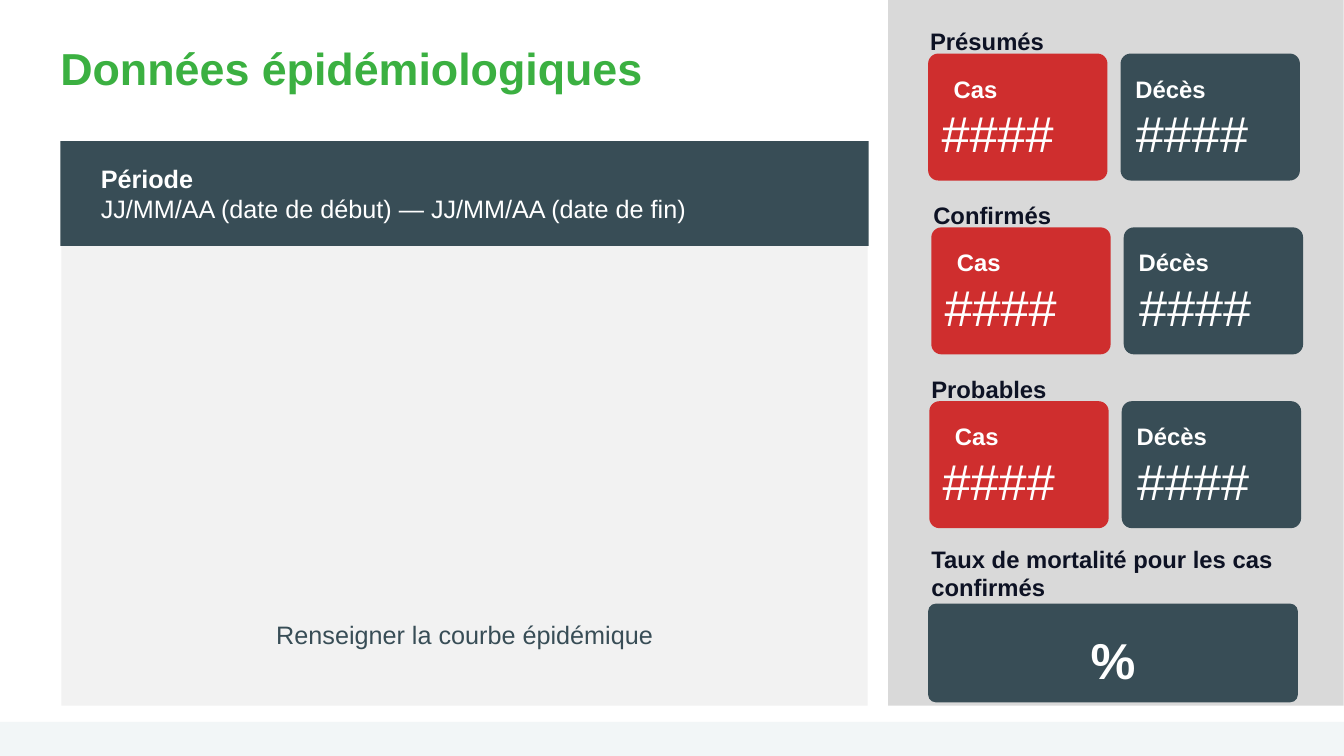
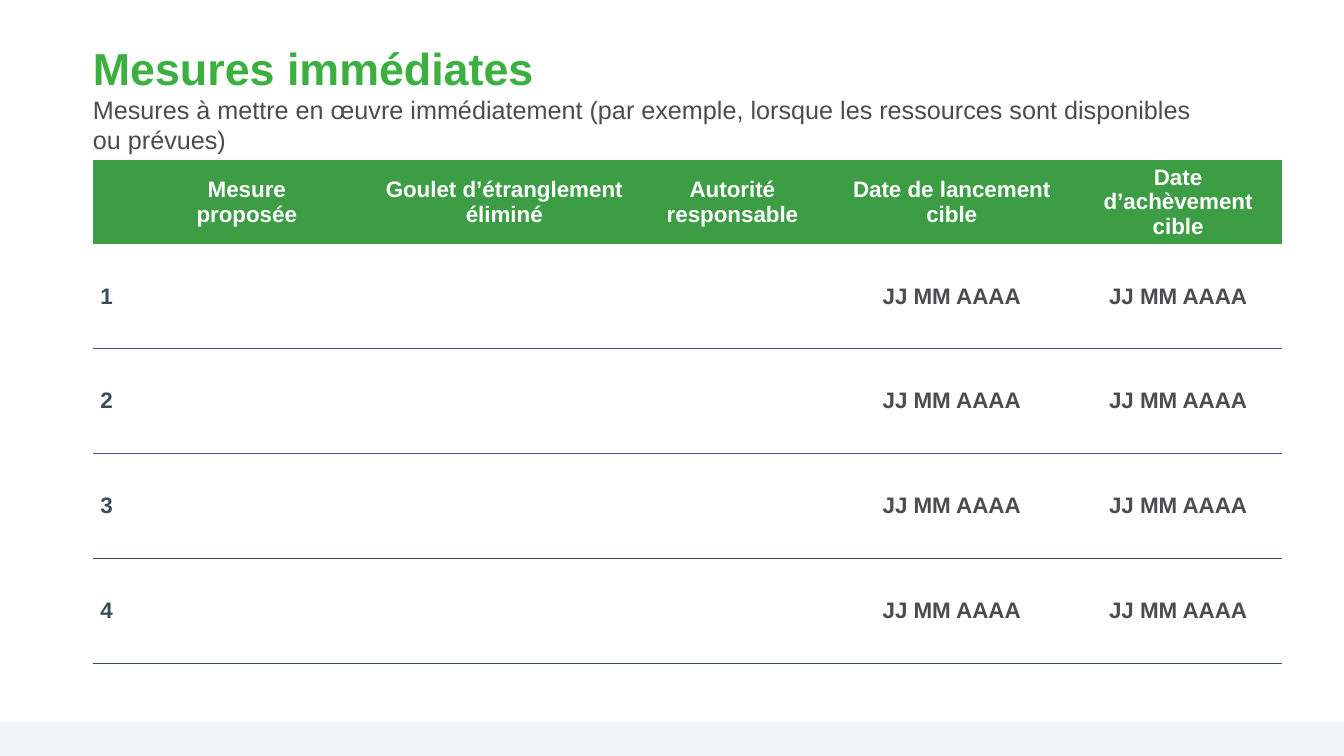
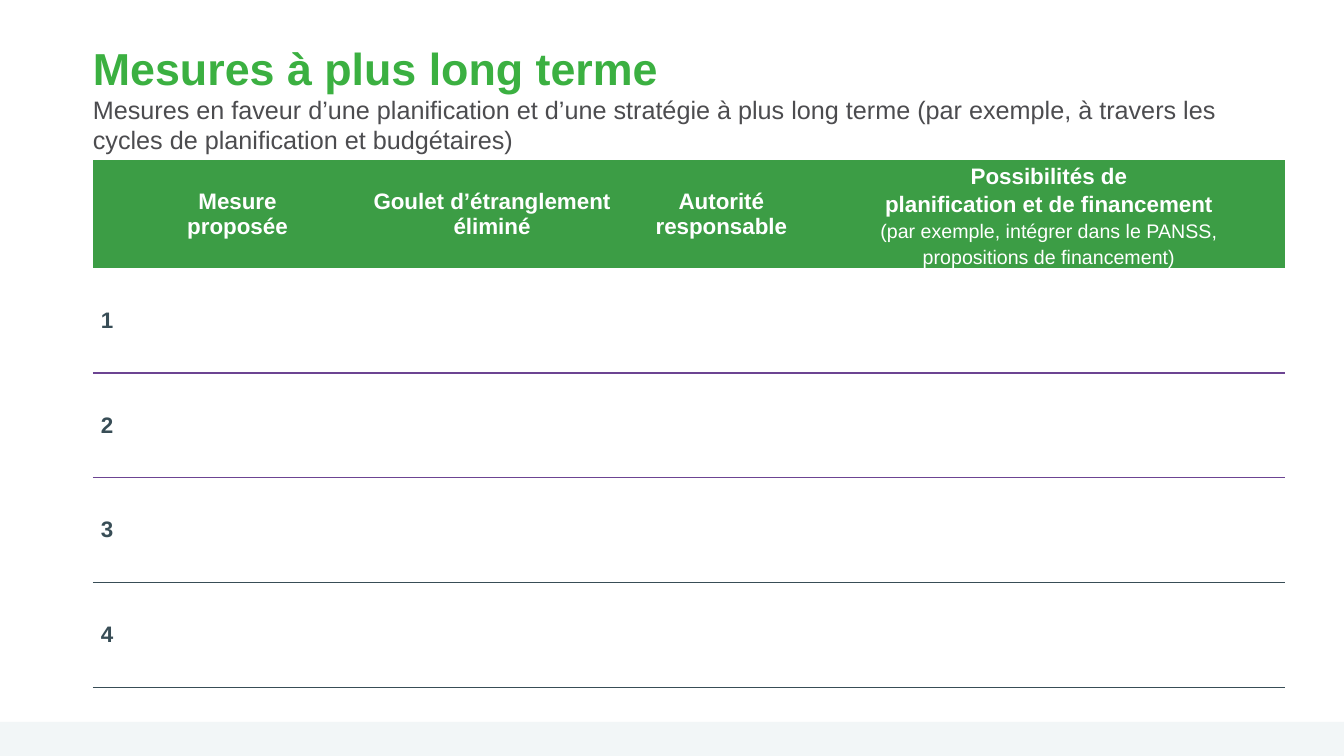
from dataclasses import dataclass
from typing import Sequence

from lxml.etree import SubElement
from pptx import Presentation
from pptx.dml.color import RGBColor
from pptx.enum.shapes import MSO_SHAPE as SHAPE
from pptx.enum.text import MSO_ANCHOR as ANCHOR, MSO_AUTO_SIZE as AUTO, PP_ALIGN as ALIGN
from pptx.oxml.ns import qn
from pptx.util import Cm, Pt

FONT = "Arial"
WHITE = RGBColor(0xFF, 0xFF, 0xFF)
TITLE_GREEN = RGBColor(0x3B, 0xB0, 0x41)
HEADER_GREEN = RGBColor(0x3C, 0x9D, 0x45)
SLATE = RGBColor(0x38, 0x4D, 0x56)
RED = RGBColor(0xCF, 0x2E, 0x2E)
PURPLE = RGBColor(0x6C, 0x44, 0x92)
NAVY = RGBColor(0x0D, 0x12, 0x24)
GREY_TEXT = RGBColor(0x4C, 0x4C, 0x4F)
SIDEBAR_GREY = RGBColor(0xD9, 0xD9, 0xD9)
PANEL_GREY = RGBColor(0xF2, 0xF2, 0xF2)
BAND_GREY = RGBColor(0xF2, 0xF6, 0xF7)

NO_TABLE_STYLE = "{2D5ABB26-0587-4C30-8999-92F81FD0307C}"
DATE = "JJ MM AAAA"
INSET = 0.13
CARD_W, CARD_H, CARD_PITCH = 4.52, 3.2, 4.85
GROUP_TOP, GROUP_STEP = 1.35, 4.38
HEADER_INSETS = (0.18, 0, 0.18, 0)


@dataclass(frozen=True)
class Box:
    """Left, top, width and height in centimetres."""
    x: float
    y: float
    w: float
    h: float

    def lengths(self) -> tuple:
        return Cm(self.x), Cm(self.y), Cm(self.w), Cm(self.h)


@dataclass(frozen=True)
class Line:
    """One paragraph of uniform text."""
    text: str
    size: float
    color: RGBColor
    bold: bool = False


@dataclass(frozen=True)
class CaseGroup:
    heading: str
    left: float
    heading_w: float


@dataclass(frozen=True)
class Card:
    """A count card; the two offsets place its label and its number."""
    label: str
    color: RGBColor
    label_dx: float
    label_w: float
    number_dx: float


@dataclass(frozen=True)
class ActionSlide:
    title: str
    subtitle: str
    title_w: float
    headers: Sequence[Sequence[Line]]
    col_widths: Sequence[float]
    header_h: float
    date_cols: Sequence[int] = ()
    last_spacing: float = 1.0


def header(*texts: str) -> list[Line]:
    return [Line(t, 16, WHITE, True) for t in texts]


GROUPS = (
    CaseGroup("Présumés", 23.39, 3.15),
    CaseGroup("Confirmés", 23.47, 3.28),
    CaseGroup("Probables", 23.42, 3.2),
)
CARDS = (
    Card("Cas", RED, 0.51, 1.37, 0.2),
    Card("Décès", SLATE, 0.23, 2.06, 0.25),
)
COMMON_HEADERS = (
    [],
    header("Mesure", "proposée"),
    header("Goulet d’étranglement", "éliminé"),
    header("Autorité responsable"),
)
ACTION_SLIDES = (
    ActionSlide(
        "Mesures immédiates",
        "Mesures à mettre en œuvre immédiatement (par exemple, lorsque les "
        "ressources sont disponibles ou prévues)",
        28.3,
        (*COMMON_HEADERS, header("Date de lancement cible"),
         header("Date d’achèvement cible")),
        (0.69, 6.38, 6.6, 4.9, 6.15, 5.26),
        2.11,
        date_cols=(4, 5),
    ),
    ActionSlide(
        "Mesures à plus long terme",
        "Mesures en faveur d’une planification et d’une stratégie à plus long "
        "terme (par exemple, à travers les cycles de planification et budgétaires)",
        29.21,
        (*COMMON_HEADERS,
         [*header("Possibilités de", "planification et de financement"),
          Line("(par exemple, intégrer dans le PANSS,", 14, WHITE),
          Line("propositions de financement)", 14, WHITE)]),
        (0.71, 5.87, 6.96, 4.6, 11.91),
        2.7,
        last_spacing=1.15,
    ),
)


def write(tf, lines: Sequence[Line], align=ALIGN.LEFT, spacing: float = 1.0) -> None:
    for i, line in enumerate(lines):
        p = tf.paragraphs[0] if i == 0 else tf.add_paragraph()
        p.alignment, p.line_spacing = align, spacing
        r = p.add_run()
        r.text = line.text
        r.font.name, r.font.size, r.font.bold = FONT, Pt(line.size), line.bold
        r.font.color.rgb = line.color


def set_insets(target, left: float = INSET, top: float = INSET,
               right: float = INSET, bottom: float = INSET) -> None:
    target.margin_left, target.margin_top = Cm(left), Cm(top)
    target.margin_right, target.margin_bottom = Cm(right), Cm(bottom)


def add_block(slide, box: Box, color: RGBColor, radius: float = 0):
    kind = SHAPE.ROUNDED_RECTANGLE if radius else SHAPE.RECTANGLE
    sp = slide.shapes.add_shape(kind, *box.lengths())
    if radius:
        sp.adjustments[0] = radius
    sp.fill.solid()
    sp.fill.fore_color.rgb = color
    sp.line.fill.background()
    sp.shadow.inherit = False
    set_insets(sp.text_frame)
    return sp


def add_text(slide, box: Box, line: Line, align=ALIGN.LEFT,
             spacing: float = 1.2, wrap: bool = False) -> None:
    tf = slide.shapes.add_textbox(*box.lengths()).text_frame
    tf.word_wrap = wrap
    set_insets(tf)
    write(tf, [line], align, spacing)


def add_footer_band(prs, slide) -> None:
    """Draw the band once and move it to the master, which all slides share."""
    element = add_block(slide, Box(0, 18.19, 33.87, 0.86), BAND_GREY).element
    element.nvSpPr.cNvPr.set("id", "99")
    prs.slide_master.element.cSld.spTree.insert(2, element)


def add_titled_slide(prs, title: str, left: float, width: float, subtitle: str = ""):
    slide = prs.slides.add_slide(prs.slide_layouts.get_by_name("Title Only"))
    s = slide.shapes.title
    s.left, s.top, s.width, s.height = Box(left, 1.02, width, 3.02).lengths()
    tf = s.text_frame
    tf.auto_size, tf.word_wrap, tf.vertical_anchor = AUTO.NONE, True, ANCHOR.TOP
    set_insets(tf, 0, 0, 0, 0)
    lines = [Line(title, 32, TITLE_GREEN, True)]
    if subtitle:
        lines.append(Line(subtitle, 18, GREY_TEXT))
    write(tf, lines)
    return slide


def add_case_group(slide, group: CaseGroup, top: float) -> None:
    for i, card in enumerate(CARDS):
        left = group.left + i * CARD_PITCH
        add_block(slide, Box(left, top, CARD_W, CARD_H), card.color, 0.08)
        add_text(slide, Box(left + card.label_dx, top + 0.25, card.label_w, 1.04),
                 Line(card.label, 17, WHITE, True), ALIGN.CENTER)
        add_text(slide, Box(left + card.number_dx, top + 0.79, 3.1, 1.98),
                 Line("####", 36, WHITE), ALIGN.CENTER)
    add_text(slide, Box(group.left - 0.08, top - 0.95, group.heading_w, 1.04),
             Line(group.heading, 17, NAVY, True))


def build_data_slide(prs):
    slide = add_titled_slide(prs, "Données épidémiologiques", 1.52, 15.8)
    add_block(slide, Box(22.38, 0, 11.48, 17.78), SIDEBAR_GREY)

    tf = add_block(slide, Box(1.55, 3.56, 20.32, 14.22), PANEL_GREY).text_frame
    tf.vertical_anchor = ANCHOR.BOTTOM
    set_insets(tf, bottom=1.4)
    write(tf, [Line("Renseigner la courbe épidémique", 18, SLATE)], ALIGN.CENTER)

    tf = add_block(slide, Box(1.52, 3.56, 20.37, 2.64), SLATE).text_frame
    tf.vertical_anchor = ANCHOR.MIDDLE
    set_insets(tf, left=1.02)
    write(tf, [Line("Période", 18, WHITE, True),
               Line("JJ/MM/AA (date de début) — JJ/MM/AA (date de fin)", 18, WHITE)])

    for i, group in enumerate(GROUPS):
        add_case_group(slide, group, GROUP_TOP + i * GROUP_STEP)

    add_text(slide, Box(23.34, 13.59, 9.25, 1.7),
             Line("Taux de mortalité pour les cas confirmés", 17, NAVY, True),
             spacing=1.0, wrap=True)
    tf = add_block(slide, Box(23.39, 15.21, 9.32, 2.49), SLATE, 0.08).text_frame
    tf.vertical_anchor = ANCHOR.MIDDLE
    write(tf, [Line("%", 36, WHITE, True)], ALIGN.CENTER, 1.2)
    return slide


def set_bottom_border(cell, color: RGBColor) -> None:
    tc_pr = cell._tc.get_or_add_tcPr()
    ln = SubElement(tc_pr, qn("a:lnB"), w=str(Pt(1)))
    fill = SubElement(ln, qn("a:solidFill"))
    SubElement(fill, qn("a:srgbClr"), val=str(color))
    tc_pr.insert(0, ln)


def fill_cell(cell, lines: Sequence[Line], spacing: float = 1.0) -> None:
    cell.vertical_anchor = ANCHOR.MIDDLE
    write(cell.text_frame, lines, ALIGN.CENTER, spacing)


def build_action_slide(prs, spec_: ActionSlide) -> None:
    slide = add_titled_slide(prs, spec_.title, 2.34, spec_.title_w, spec_.subtitle)
    heights = (spec_.header_h, *[2.64] * 4)
    box = Box(2.34, 4.04, sum(spec_.col_widths), sum(heights))
    frame = slide.shapes.add_table(len(heights), len(spec_.col_widths), *box.lengths())
    frame.element.find(".//" + qn("a:tableStyleId")).text = NO_TABLE_STYLE
    table = frame.table
    table.horz_banding = False
    for row, height in zip(table.rows, heights):
        row.height = Cm(height)
    for col, width in zip(table.columns, spec_.col_widths):
        col.width = Cm(width)

    last = len(spec_.headers) - 1
    for c, lines in enumerate(spec_.headers):
        cell = table.cell(0, c)
        cell.fill.solid()
        cell.fill.fore_color.rgb = HEADER_GREEN
        set_insets(cell, *HEADER_INSETS)
        fill_cell(cell, lines, spec_.last_spacing if c == last else 1.0)

    for r in range(1, len(heights)):
        for c in range(last + 1):
            cell = table.cell(r, c)
            cell.fill.background()
            set_insets(cell)
            set_bottom_border(cell, PURPLE if r <= 2 else SLATE)
            if c == 0:
                fill_cell(cell, [Line(str(r), 16, SLATE, True)])
            elif c in spec_.date_cols:
                fill_cell(cell, [Line(DATE, 16, GREY_TEXT, True)])


def main() -> None:
    prs = Presentation()
    prs.slide_width, prs.slide_height = Cm(33.87), Cm(19.05)
    add_footer_band(prs, build_data_slide(prs))
    for action_slide in ACTION_SLIDES:
        build_action_slide(prs, action_slide)
    prs.save("out.pptx")


if __name__ == "__main__":
    main()
